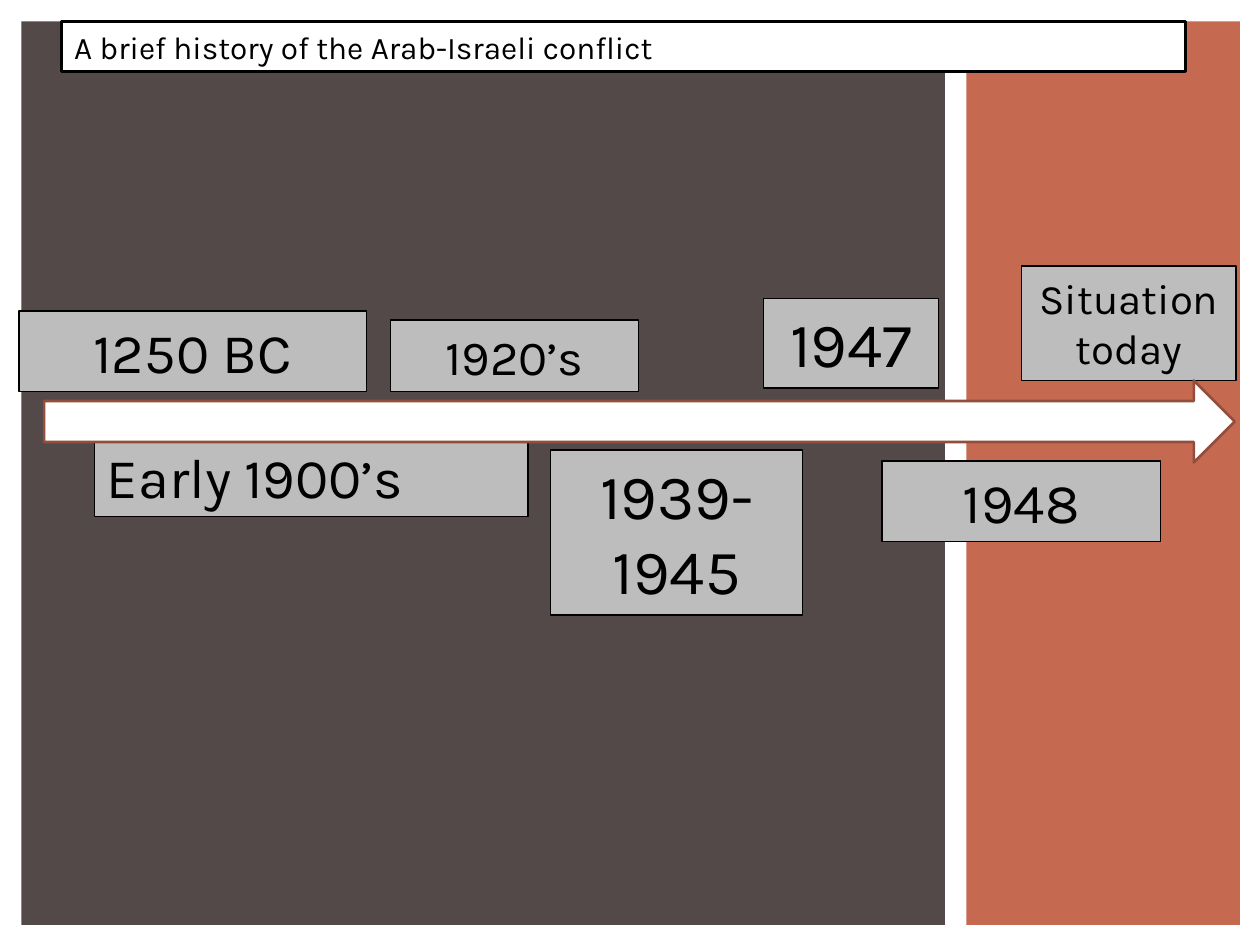
from pptx import Presentation
from pptx.dml.color import RGBColor as Color
from pptx.enum.shapes import MSO_SHAPE as Shape
from pptx.enum.text import MSO_ANCHOR as Anchor, MSO_AUTO_SIZE as Fit, PP_ALIGN as Align
from pptx.util import Inches, Pt

WHITE = Color(0xFF, 0xFF, 0xFF)
BLACK = Color(0, 0, 0)
BROWN = Color(0x53, 0x49, 0x49)
CLAY = Color(0xC6, 0x69, 0x51)
RUST = Color(0x92, 0x4E, 0x3C)
GREY = Color(0xBD, 0xBD, 0xBD)

COLS, ROWS = 100, 75
CELL = Inches(10) / COLS

DATES = [
    ("1250 BC", 32, Align.CENTER, (0, 4.5, 27.6, 6.4)),
    ("Early 1900’s", 32, Align.LEFT, (6, 14.4, 34.4, 6.4)),
    ("1920’s", 28, Align.CENTER, (29.5, 5.2, 19.7, 5.7)),
    ("1939-1945", 36, Align.CENTER, (42.2, 15.5, 20, 13.1)),
    ("1947", 36, Align.CENTER, (59.1, 3.5, 13.9, 7.1)),
    ("Situation today", 24, Align.CENTER, (79.6, 0.9, 17, 9.1)),
    ("1948", 32, Align.CENTER, (68.5, 16.4, 22.1, 6.4)),
]


def inside(box, part):
    return box[0] + part[0], box[1] + part[1], part[2], part[3]


def draw(slide, box, fill, line=None, width=1.5, kind=Shape.RECTANGLE):
    shape = slide.shapes.add_shape(kind, *(round(n * CELL) for n in box))
    shape.shadow.inherit = False
    shape.fill.solid()
    shape.fill.fore_color.rgb = fill
    if line is None:
        shape.line.fill.background()
    else:
        shape.line.color.rgb = line
        shape.line.width = Pt(width)
    return shape


def write(shape, text, size=18, align=Align.LEFT, color=BLACK, font="Karla"):
    frame = shape.text_frame
    frame.word_wrap = True
    frame.auto_size = Fit.SHAPE_TO_FIT_TEXT
    frame.vertical_anchor = Anchor.TOP
    para = frame.paragraphs[0]
    para.alignment = align
    run = para.add_run()
    run.text = text
    run.font.size = Pt(size)
    run.font.name = font
    run.font.color.rgb = color


def panels(slide, box):
    wide, gap = 73.3, 1.7
    high = box[3]
    side = wide + gap
    draw(slide, inside(box, (side, 0, box[2] - side, high)), CLAY)
    draw(slide, inside(box, (0, 0, wide, high)), BROWN)


def title(slide, box):
    bar = draw(slide, box, WHITE, BLACK)
    write(bar, "A brief history of the Arab-Israeli conflict")


def timeline(slide, box):
    for text, size, align, part in DATES:
        label = draw(slide, inside(box, part), GREY, BLACK, 0.79)
        write(label, text, size=size, align=align)
    arrow = inside(box, (2, 10, box[2] - 2, 6.5))
    draw(slide, arrow, WHITE, RUST, kind=Shape.RIGHT_ARROW)


def main():
    deck = Presentation()
    deck.slide_width = round(COLS * CELL)
    deck.slide_height = round(ROWS * CELL)
    slide = deck.slides.add_slide(deck.slide_layouts[6])
    panels(slide, (1.7, 1.7, 96.7, 71.7))
    title(slide, (4.9, 1.7, 89.2, 4))
    timeline(slide, (1.5, 20.2, 96.5, 28.6))
    deck.save("out.pptx")


if __name__ == "__main__":
    main()
